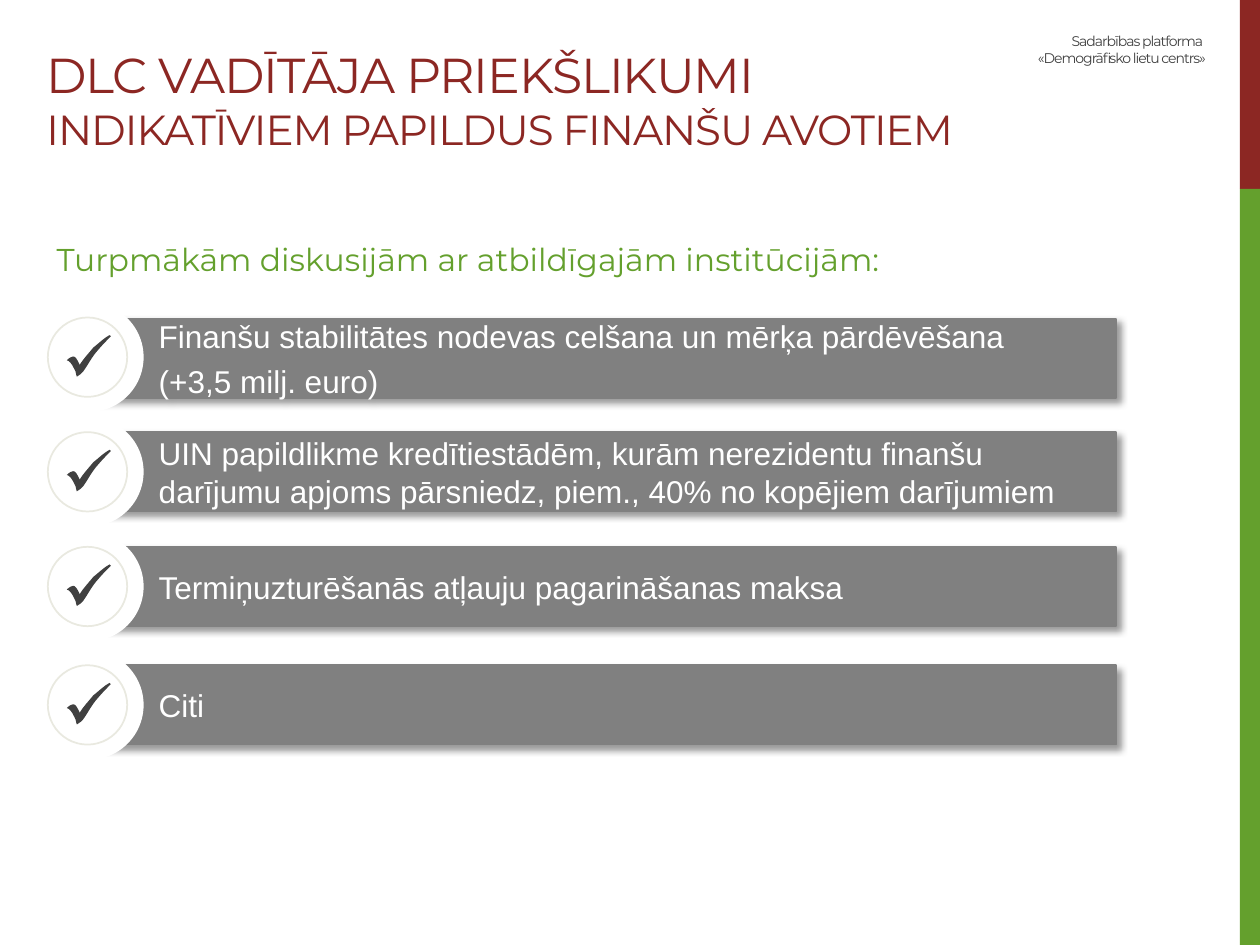
from lxml.etree import SubElement
from pptx import Presentation
from pptx.dml.color import RGBColor
from pptx.enum.shapes import MSO_SHAPE
from pptx.enum.text import MSO_ANCHOR, PP_ALIGN
from pptx.oxml import parse_xml
from pptx.oxml.ns import nsdecls, qn
from pptx.util import Inches, Pt

RED = RGBColor(0x8C, 0x27, 0x23)
GREEN = RGBColor(0x64, 0xA0, 0x2D)
GRAY = RGBColor(0x80, 0x80, 0x80)
DARK = RGBColor(0x40, 0x40, 0x40)
IVORY = RGBColor(0xE9, 0xE9, 0xE0)
WHITE = RGBColor(0xFF, 0xFF, 0xFF)

CHECK_START = (34, 0)
CHECK_CURVES = [
    [(35, 1)] * 3,
    [(32, 4), (28, 8), (23, 14)],
    [(19, 19), (16, 25), (13, 29)],
    [(11, 31)] * 3,
    [(10, 32), (9, 32), (8, 33)],
    [(8, 32), (7, 31), (7, 29)],
    [(6, 27)] * 3,
    [(5, 25), (4, 23), (3, 22)],
    [(2, 21), (1, 20), (0, 20)],
    [(2, 18), (4, 17), (5, 17)],
    [(7, 17), (8, 19), (10, 23)],
    [(10, 24)] * 3,
    [(13, 19), (17, 15), (21, 10)],
    [(26, 6), (30, 2), (34, 0)],
]
ITEMS = [
    (2.53, 2.40, ["Finanšu stabilitātes nodevas celšana un mērķa pārdēvēšana",
                  "(+3,5 milj. euro)"]),
    (3.43, 3.31, ["UIN papildlikme kredītiestādēm, kurām nerezidentu finanšu "
                  "darījumu apjoms pārsniedz, piem., 40% no kopējiem darījumiem"]),
    (4.34, 4.22, ["Termiņuzturēšanās atļauju pagarināšanas maksa"]),
    (5.28, 5.16, ["Citi"]),
]


def write(para, text, size=18, color=WHITE, font="Arial", spacing=None):
    for index, line in enumerate(text.split("\n")):
        if index:
            para.add_line_break()
        span = para.add_run()
        span.text = line
        span.font.size = Pt(size)
        span.font.name = font
        span.font.color.rgb = color
        if spacing is not None:
            span._r.get_or_add_rPr().set("spc", str(round(spacing * 100)))


class SlideBuilder:
    heading_font = "Montserrat"
    tracking = -0.6

    def __init__(self, page):
        self.page = page

    def shape(self, shapes, kind, left, top, width, height, fill=None, line=None):
        box = shapes.add_shape(kind, Inches(left), Inches(top), Inches(width), Inches(height))
        self.paint(box, fill, line)
        return box

    def paint(self, box, fill, line=None):
        box.shadow.inherit = False
        if fill is None:
            box.fill.background()
        else:
            box.fill.solid()
            box.fill.fore_color.rgb = fill
        if line is None:
            box.line.fill.background()
        else:
            box.line.color.rgb = line
            box.line.width = Pt(1)

    def stripe(self, top, height, color):
        self.shape(self.page.shapes, MSO_SHAPE.RECTANGLE, 9.84, top, 0.16, height, color)

    def text(self, left, top, width, height, spans, color, tracking=None,
             align=PP_ALIGN.LEFT, anchor=MSO_ANCHOR.TOP):
        box = self.page.shapes.add_textbox(
            Inches(left), Inches(top), Inches(width), Inches(height))
        frame = box.text_frame
        frame.word_wrap = True
        frame.vertical_anchor = anchor
        para = frame.paragraphs[0]
        para.alignment = align
        for text, size in spans:
            write(para, text, size=size, color=color, font=self.heading_font, spacing=tracking)

    def bar(self, top, lines):
        box = self.shape(self.page.shapes, MSO_SHAPE.RECTANGLE,
                         0.71, top, 8.15, 0.63, GRAY, GRAY)
        self.cast_shadow(box)
        frame = box.text_frame
        frame.word_wrap = True
        frame.vertical_anchor = MSO_ANCHOR.MIDDLE
        frame.margin_left = Inches(0.55)
        for index, line in enumerate(lines):
            para = frame.add_paragraph() if index else frame.paragraphs[0]
            para.alignment = PP_ALIGN.LEFT
            para.space_after = Pt(3.6)
            write(para, line)

    def cast_shadow(self, box):
        effects = box._element.spPr.find(qn("a:effectLst"))
        effects.append(parse_xml(
            f'<a:outerShdw {nsdecls("a")} blurRad="{Pt(4)}" dist="{Pt(3)}" dir="2700000" '
            'algn="tl" rotWithShape="0"><a:srgbClr val="000000">'
            '<a:alpha val="40000"/></a:srgbClr></a:outerShdw>'))

    def badge(self, top):
        shapes = self.page.shapes.add_group_shape().shapes
        self.shape(shapes, MSO_SHAPE.OVAL, 0.27, top, 0.87, 0.87, WHITE)
        self.shape(shapes, MSO_SHAPE.OVAL, 0.38, top + 0.12, 0.63, 0.63, line=IVORY)
        self.check(shapes, 0.53, top + 0.26)

    def check(self, shapes, left, top):
        outline = shapes.build_freeform(*CHECK_START, scale=Inches(0.01))
        outline.add_line_segments([curve[-1] for curve in CHECK_CURVES], close=True)
        mark = outline.convert_to_shape(Inches(left), Inches(top))
        self.paint(mark, DARK)
        edges = list(mark._element.spPr.iter(qn("a:lnTo")))
        for edge, curve in zip(edges, CHECK_CURVES):
            edge.tag = qn("a:cubicBezTo")
            for point in list(edge):
                edge.remove(point)
            for x, y in curve:
                SubElement(edge, qn("a:pt"), x=str(x), y=str(y))


def main():
    deck = Presentation()
    deck.slide_width = Inches(10)
    deck.slide_height = Inches(7.5)
    builder = SlideBuilder(deck.slides.add_slide(deck.slide_layouts[6]))

    builder.stripe(0, 1.5, RED)
    builder.stripe(1.5, 6, GREEN)
    builder.text(7.68, 0.21, 1.99, 0.35,
                 [("Sadarbības platforma \n«Demogrāfisko lietu centrs»", 8)],
                 DARK, builder.tracking, PP_ALIGN.RIGHT)
    builder.text(0.27, 0.21, 8.09, 1.06,
                 [("DLC VADĪTĀJA PRIEKŠLIKUMI ", 28),
                  ("INDIKATĪVIEM PAPILDUS FINANŠU AVOTIEM", 24)],
                 RED, builder.tracking, anchor=MSO_ANCHOR.BOTTOM)
    builder.text(0.35, 1.86, 7.38, 0.4,
                 [("Turpmākām diskusijām ar atbildīgajām institūcijām:", 18)], GREEN)
    for bar_top, badge_top, lines in ITEMS:
        builder.bar(bar_top, lines)
        builder.badge(badge_top)

    deck.save("out.pptx")


if __name__ == "__main__":
    main()
